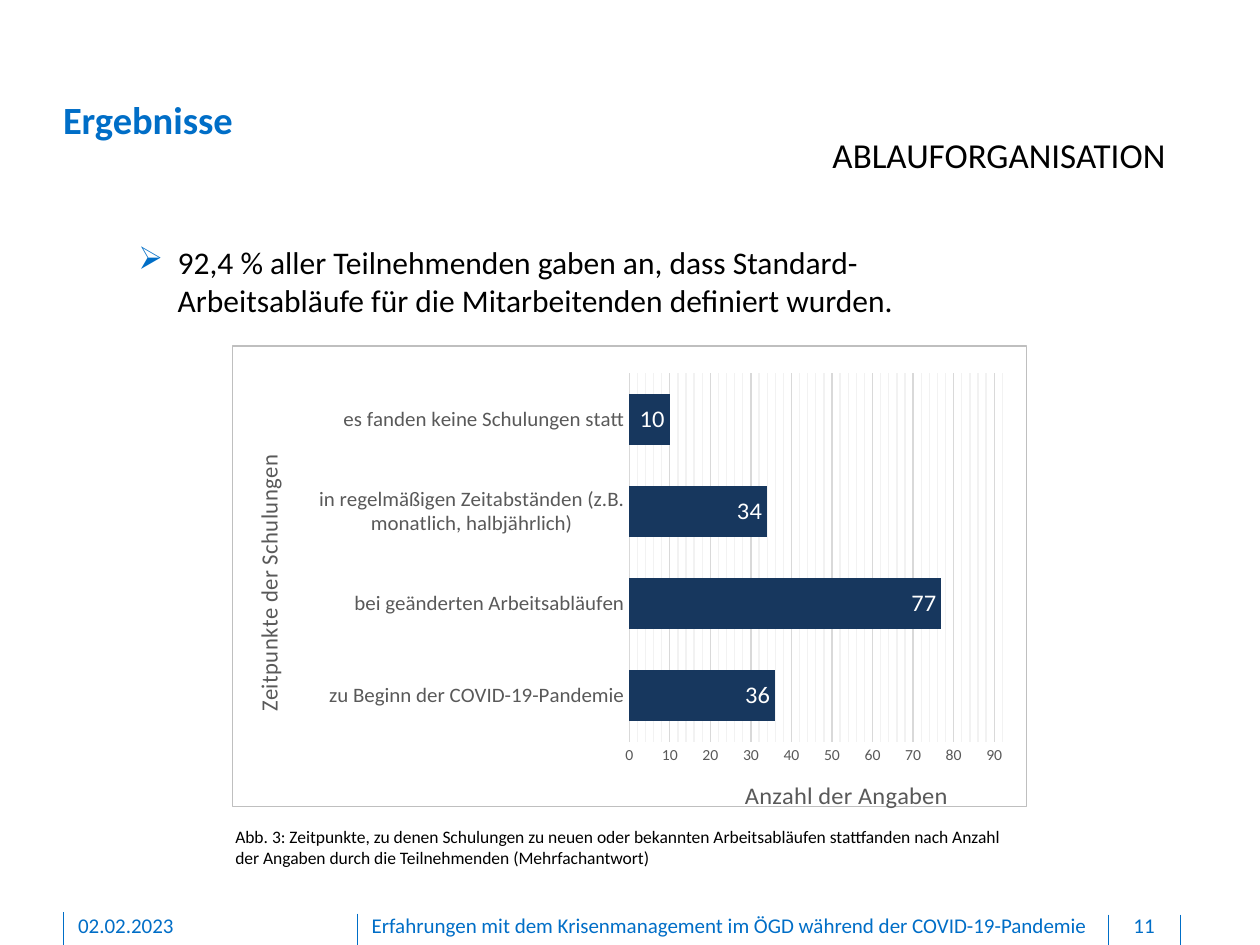
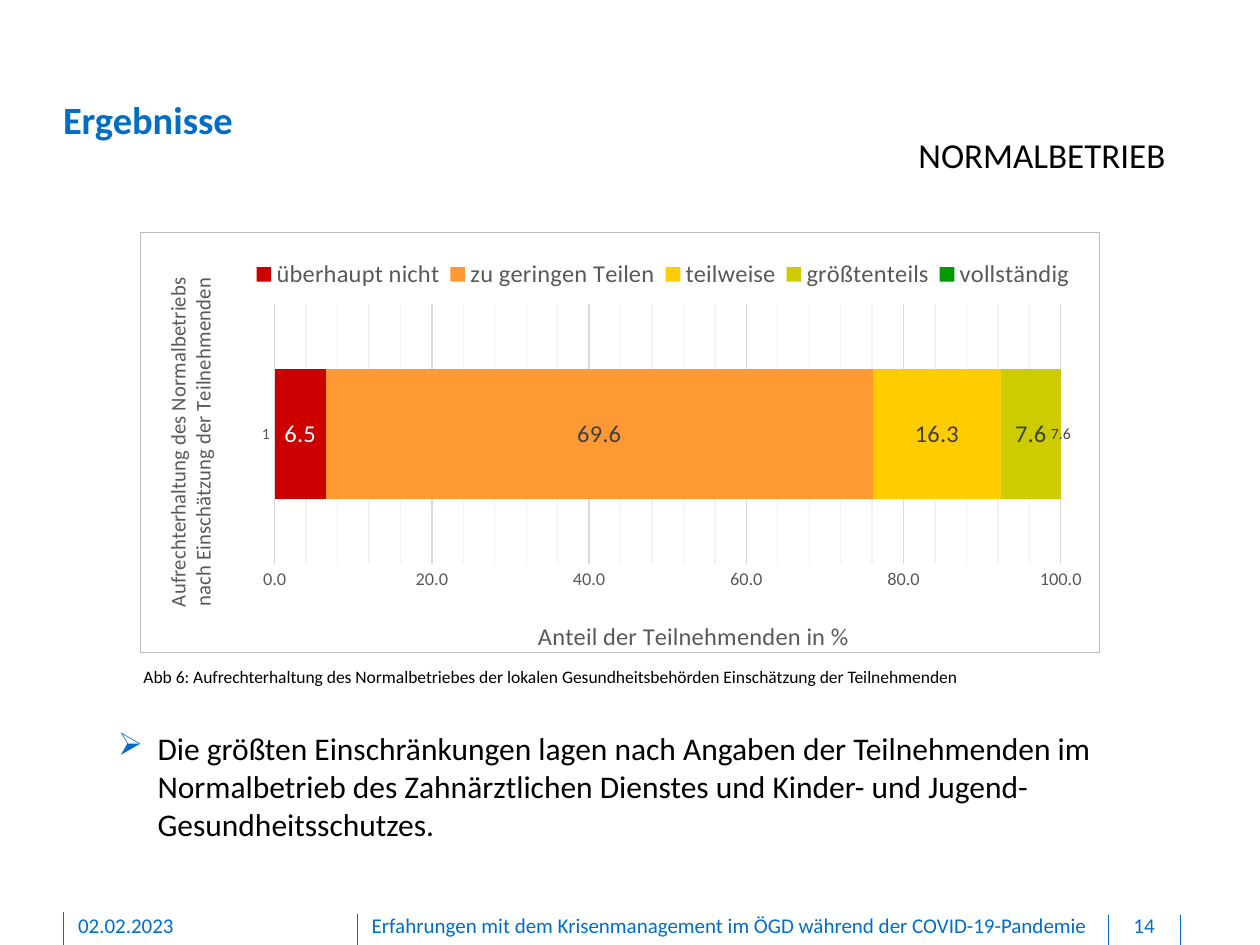
from lxml import etree
from pptx import Presentation
from pptx.chart.data import CategoryChartData
from pptx.dml.color import RGBColor
from pptx.enum.chart import XL_CHART_TYPE as ChartType
from pptx.enum.chart import XL_LABEL_POSITION as LabelPosition
from pptx.enum.chart import XL_LEGEND_POSITION as LegendPosition
from pptx.enum.chart import XL_TICK_MARK as TickMark
from pptx.enum.shapes import MSO_CONNECTOR as Connector
from pptx.enum.text import PP_ALIGN as Align
from pptx.oxml import parse_xml
from pptx.oxml.ns import nsdecls, qn
from pptx.util import Pt

COLORS = {
    "blue": "006EC7", "black": "000000", "white": "FFFFFF", "navy": "17375E",
    "gray": "595959", "dark": "404040", "grid": "D9D9D9", "fine_grid": "F2F2F2",
    "border": "BFBFBF", "red": "CC0000", "orange": "FF9933", "yellow": "FFCC00",
    "olive": "CCCC00", "green": "009900",
}
FONT = "Calibri"
INSETS = (7.2, 3.6, 7.2, 3.6)
FOOTER_INSETS = (0, 0, 0, 3.6)
FOOTER_TOP = 521.3
FOOTER_TEXT = "Erfahrungen mit dem Krisenmanagement im ÖGD während der COVID-19-Pandemie"


def rgb(name):
    return RGBColor.from_string(COLORS[name])


def set_font(font, size, color, bold=False):
    font.name = FONT
    font.size = Pt(size)
    font.bold = bold
    font.color.rgb = rgb(color)


def set_line(line, color, width=0.75):
    line.color.rgb = rgb(color)
    line.width = Pt(width)


def line_props(color, fill=""):
    return parse_xml(
        f"<c:spPr {nsdecls('c', 'a')}>{fill}<a:ln w='{Pt(0.75)}'><a:solidFill>"
        f"<a:srgbClr val='{COLORS[color]}'/></a:solidFill></a:ln></c:spPr>")


def set_layout(parent, index, x, y, w=None, h=None, inner=False):
    for old in parent.findall(qn("c:layout")):
        parent.remove(old)
    layout = parse_xml(f"<c:layout {nsdecls('c')}><c:manualLayout/></c:layout>")
    values = [("layoutTarget", "inner")] if inner else []
    values += [("xMode", "edge"), ("yMode", "edge"), ("x", x), ("y", y)]
    if w is not None:
        values += [("w", w), ("h", h)]
    for tag, value in values:
        etree.SubElement(layout[0], qn(f"c:{tag}")).set("val", str(value))
    parent.insert(index, layout)


class Deck:
    def __init__(self):
        self.deck = Presentation()
        self.deck.slide_width = Pt(720)
        self.deck.slide_height = Pt(540)
        self.page = None

    def add_page(self, heading, number):
        self.page = self.deck.slides.add_slide(self.deck.slide_layouts[6])
        for x, top in ((204.5, 522), (36, 521.3), (674.6, 522.7), (633.6, 522.7)):
            self.rule(x, top)
        footers = (
            (44.6, 146, "02.02.2023", Align.LEFT),
            (212.4, 414, FOOTER_TEXT, Align.LEFT),
            (634.3, 38.9, number, Align.CENTER),
        )
        for left, width, words, align in footers:
            self.text((left, FOOTER_TOP, width, 15.1), words, 12, "blue",
                      align=align, insets=FOOTER_INSETS)
        self.text((36, 54.7, 637.2, 26.6), "Ergebnisse", 22, "blue",
                  bold=True, insets=(0, 0, 0, 0))
        self.text((252.7, 72.7, 420.5, 31.7), heading, 20, align=Align.RIGHT)

    def rule(self, x, top):
        line = self.page.shapes.add_connector(
            Connector.STRAIGHT, Pt(x), Pt(top), Pt(x), Pt(540))
        set_line(line.line, "blue", 0.5)
        etree.SubElement(line._element.spPr, qn("a:effectLst"))

    def text(self, place, words, size, color="black", bold=False,
             align=Align.LEFT, insets=INSETS, bullet=False):
        box = self.page.shapes.add_textbox(*map(Pt, place))
        frame = box.text_frame
        frame.word_wrap = True
        frame.margin_left, frame.margin_top, frame.margin_right, frame.margin_bottom = map(Pt, insets)
        para = frame.paragraphs[0]
        para.alignment = align
        if bullet:
            props = para._p.get_or_add_pPr()
            props.set("marL", str(Pt(22.5)))
            props.set("indent", str(Pt(-22.5)))
            shade = etree.SubElement(props, qn("a:buClr"))
            etree.SubElement(shade, qn("a:srgbClr")).set("val", COLORS["blue"])
            etree.SubElement(props, qn("a:buChar")).set("char", "➢")
        span = para.add_run()
        span.text = words
        set_font(span.font, size, color, bold)

    def bullet(self, place, words):
        self.text(place, words, 18, bullet=True)

    def caption(self, place, words):
        self.text(place, words, 10)

    def chart(self, place, kind, categories, series, plot_area, gap, number_format="General"):
        data = CategoryChartData(number_format=number_format)
        data.categories = categories
        for name, values, *_ in series:
            data.add_series(name, values)
        chart = self.page.shapes.add_chart(kind, *map(Pt, place), data).chart
        set_font(chart.font, 10, "black")
        chart.has_title = False
        chart.has_legend = False
        plot = chart.plots[0]
        plot.gap_width = gap
        plot.vary_by_categories = False
        for bars, (_, _, fill, label_color, label_size) in zip(plot.series, series):
            bars.format.fill.solid()
            bars.format.fill.fore_color.rgb = rgb(fill)
            labels = bars.data_labels
            labels.show_value = True
            labels.number_format = number_format
            labels.number_format_is_linked = False
            set_font(labels.font, label_size, label_color)
        root = chart._chartSpace
        set_layout(root.find(f".//{qn('c:plotArea')}"), 0, *plot_area, inner=True)
        root.find(qn("c:chart")).addnext(line_props("border", "<a:noFill/>"))
        return chart

    def axis(self, axis, title, title_size, tick_size, title_spot, upright=False):
        axis.major_tick_mark = axis.minor_tick_mark = TickMark.NONE
        set_font(axis.tick_labels.font, tick_size, "gray")
        frame = axis.axis_title.text_frame
        frame.text = title
        for para in frame.paragraphs:
            for span in para.runs:
                set_font(span.font, title_size, "gray")
        if upright:
            body = frame._txBody.find(qn("a:bodyPr"))
            body.set("rot", "-5400000")
            body.set("vert", "horz")
        set_layout(axis.axis_title._element, 1, *title_spot)

    def category_axis(self, chart, *settings):
        self.axis(chart.category_axis, *settings, upright=True)
        chart.category_axis.has_major_gridlines = False
        set_line(chart.category_axis.format.line, "grid")

    def value_axis(self, chart, *settings, maximum, step, number_format="General"):
        axis = chart.value_axis
        self.axis(axis, *settings)
        axis.minimum_scale = 0
        axis.maximum_scale = maximum
        axis.major_unit = step
        axis.minor_unit = step / 5
        axis.tick_labels.number_format = number_format
        axis.tick_labels.number_format_is_linked = False
        axis.format.line.fill.background()
        axis.has_major_gridlines = axis.has_minor_gridlines = True
        set_line(axis.major_gridlines.format.line, "grid")
        axis._element.find(qn("c:minorGridlines")).append(line_props("fine_grid"))

    def legend(self, chart, *area):
        chart.has_legend = True
        chart.legend.position = LegendPosition.TOP
        chart.legend.include_in_layout = False
        set_font(chart.legend.font, 14, "gray")
        set_layout(chart.legend._element, 1, *area)


def add_workflow_page(deck):
    deck.add_page("ABLAUFORGANISATION", "11")
    deck.bullet((72, 135.4, 501.8, 51.1),
                "92,4 % aller Teilnehmenden gaben an, dass Standard-Arbeitsabläufe "
                "für die Mitarbeitenden definiert wurden.")
    trainings = {
        "zu Beginn der COVID-19-Pandemie": 36,
        "bei geänderten Arbeitsabläufen": 77,
        "in regelmäßigen Zeitabständen (z.B. monatlich, halbjährlich)": 34,
        "es fanden keine Schulungen statt": 10,
    }
    series = [("Series 1", list(trainings.values()), "navy", "white", 14)]
    chart = deck.chart((132.5, 197.3, 454.3, 270), ChartType.BAR_CLUSTERED,
                       list(trainings), series, (0.5, 0.06, 0.47, 0.8), 80)
    chart.plots[0].series[0].data_labels.position = LabelPosition.INSIDE_END
    deck.category_axis(chart, "Zeitpunkte der Schulungen", 13.3, 12, (0.02, 0.24))
    deck.value_axis(chart, "Anzahl der Angaben", 14, 9, (0.64, 0.93), maximum=92, step=10)
    deck.caption((127.4, 468.7, 460, 31.7),
                 "Abb. 3: Zeitpunkte, zu denen Schulungen zu neuen oder bekannten "
                 "Arbeitsabläufen stattfanden nach Anzahl der Angaben durch die "
                 "Teilnehmenden (Mehrfachantwort)")


def add_operations_page(deck):
    deck.add_page("NORMALBETRIEB", "14")
    series = [
        ("überhaupt nicht", [6.5], "red", "white", 14),
        ("zu geringen Teilen", [69.6], "orange", "dark", 14),
        ("teilweise", [16.3], "yellow", "dark", 14),
        ("größtenteils", [7.6], "olive", "dark", 14),
        ("vollständig", [7.6], "green", "dark", 9),
    ]
    chart = deck.chart((79.9, 132.5, 548.6, 244.1), ChartType.BAR_STACKED,
                       ["1"], series, (0.14, 0.17, 0.82, 0.62), 100, "0.0")
    chart.plots[0].overlap = 100
    deck.category_axis(chart, "Aufrechterhaltung des Normalbetriebs\n"
                       "nach Einschätzung der Teilnehmenden", 12, 9, (0.02, 0.11))
    deck.value_axis(chart, "Anteil der Teilnehmenden in %", 14, 10.5, (0.41, 0.91),
                    maximum=100, step=20, number_format="0.0")
    deck.legend(chart, 0.11, 0.06, 0.87, 0.08)
    deck.caption((74.9, 377.3, 490.3, 19.4),
                 "Abb 6: Aufrechterhaltung des Normalbetriebes der lokalen "
                 "Gesundheitsbehörden Einschätzung der Teilnehmenden")
    deck.bullet((60.5, 413.3, 640, 72.7),
                "Die größten Einschränkungen lagen nach Angaben der Teilnehmenden im "
                "Normalbetrieb des Zahnärztlichen Dienstes und Kinder- und "
                "Jugend-Gesundheitsschutzes.")


def main():
    deck = Deck()
    add_workflow_page(deck)
    add_operations_page(deck)
    deck.deck.save("out.pptx")


if __name__ == "__main__":
    main()
